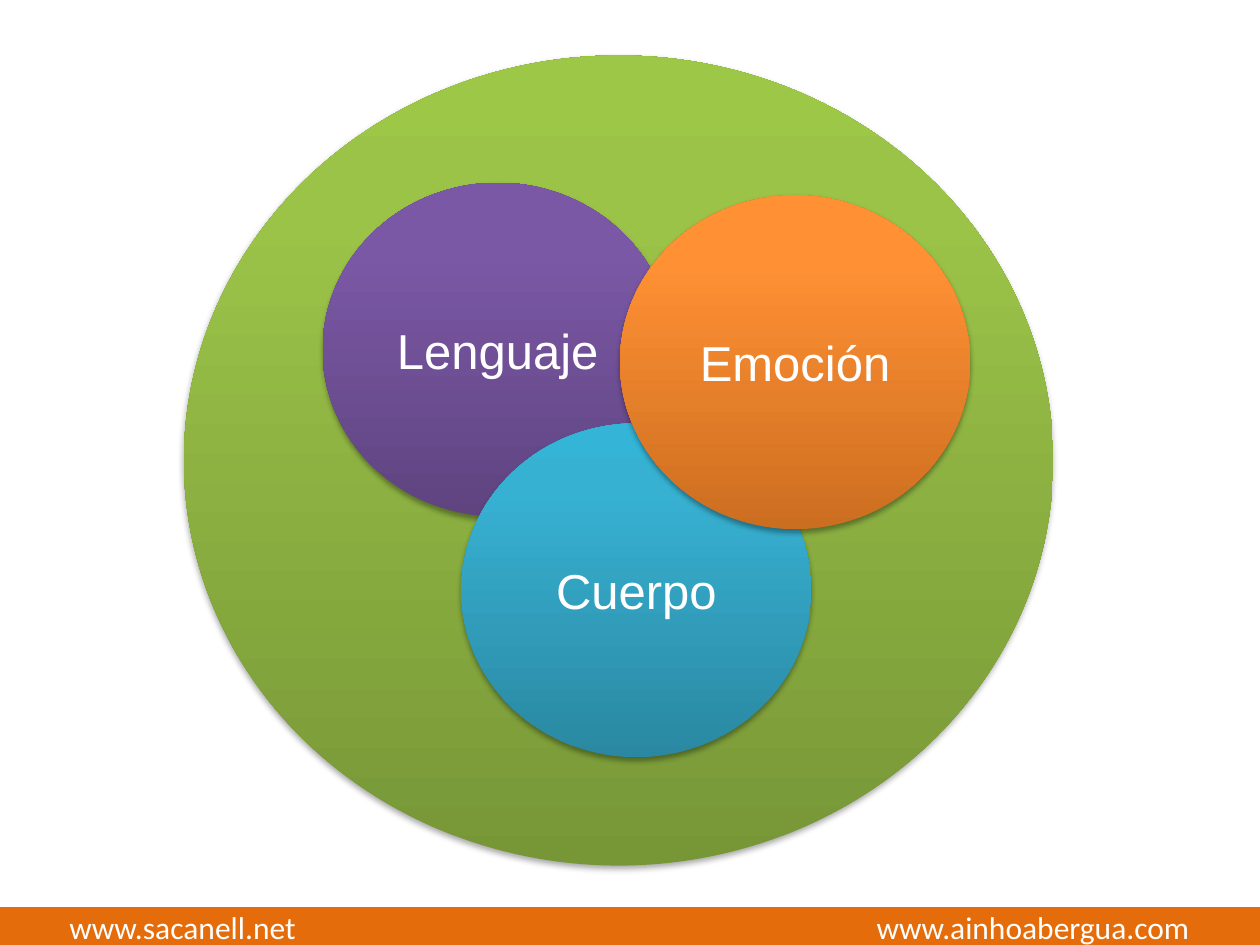
from lxml import etree
from pptx import Presentation
from pptx.dml.color import RGBColor
from pptx.enum.shapes import MSO_SHAPE
from pptx.enum.text import MSO_ANCHOR, PP_ALIGN
from pptx.oxml.ns import qn
from pptx.util import Inches, Pt

OVAL, RECT = MSO_SHAPE.OVAL, MSO_SHAPE.RECTANGLE
MIDDLE, CENTER, LEFT = MSO_ANCHOR.MIDDLE, PP_ALIGN.CENTER, PP_ALIGN.LEFT
STOPS = (0, 80, 100)


def rgb(color):
    return RGBColor.from_string(color)


def add_node(parent, tag, **attrs):
    """Append a DrawingML element with the given attributes."""
    return etree.SubElement(parent, qn(tag), {k: str(v) for k, v in attrs.items()})


prs = Presentation()
prs.slide_width, prs.slide_height = Inches(10), Inches(7.5)
slide = prs.slides.add_slide(prs.slide_layouts[6])

# Large circle first, then the three overlapping ones; colours run bottom to top
circles = [
    ("", 1.46, 0.44, 6.9, 6.43, ("779737", "9BC348", "9DC746")),
    ("Lenguaje", 2.56, 1.45, 2.78, 2.65, ("5F4480", "7B58A6", "7C57A8")),
    ("Cuerpo", 3.66, 3.36, 2.78, 2.65, ("2A88A2", "37B1D2", "34B4D6")),
    ("Emoción", 4.92, 1.55, 2.78, 2.65, ("CC6E20", "FF9034", "FF9136")),
]
for label, x, y, w, h, colors in circles:
    s = slide.shapes.add_shape(OVAL, Inches(x), Inches(y), Inches(w), Inches(h))
    s.line.fill.background()
    s.fill.gradient()
    s.fill.gradient_angle = 90
    spPr = s._element.spPr
    stops = spPr.find(".//" + qn("a:gsLst"))
    for old in list(stops):
        stops.remove(old)
    for pos, color in zip(STOPS, colors):
        add_node(add_node(stops, "a:gs", pos=pos * 1000), "a:srgbClr", val=color)

    s.shadow.inherit = False
    shadow = add_node(spPr.find(qn("a:effectLst")), "a:outerShdw", blurRad=Pt(3.1),
                      dist=Pt(1.8), dir=90 * 60000, rotWithShape=0)
    add_node(add_node(shadow, "a:srgbClr", val="000000"), "a:alpha", val=35000)

    if label:
        tf = s.text_frame
        tf.vertical_anchor = MIDDLE
        p = tf.paragraphs[0]
        p.alignment = CENTER
        r = p.add_run()
        r.text = label
        r.font.name, r.font.size = "Arial", Pt(28)
        r.font.color.rgb = rgb("FFFFFF")

# Footer band: the second address ends at a right-aligned tab
s = slide.shapes.add_shape(RECT, 0, Inches(7.21), Inches(10), Inches(0.29))
s.shadow.inherit = False
s.fill.solid()
s.fill.fore_color.rgb = rgb("E46C0A")
s.line.color.rgb = rgb("E46C0A")
s.line.width = Pt(2)
tf = s.text_frame
tf.vertical_anchor = MIDDLE
tf.margin_left, tf.margin_right = Inches(0.55), Inches(0.5)
tf.margin_top = tf.margin_bottom = 0
p = tf.paragraphs[0]
p.alignment = LEFT
tabs = add_node(p._p.get_or_add_pPr(), "a:tabLst")
add_node(tabs, "a:tab", pos=Inches(8.89), algn="r")
r = p.add_run()
r.text = "www.sacanell.net\twww.ainhoabergua.com"
r.font.name, r.font.size = "Calibri", Pt(18)
r.font.color.rgb = rgb("FFFFFF")

prs.save("out.pptx")
